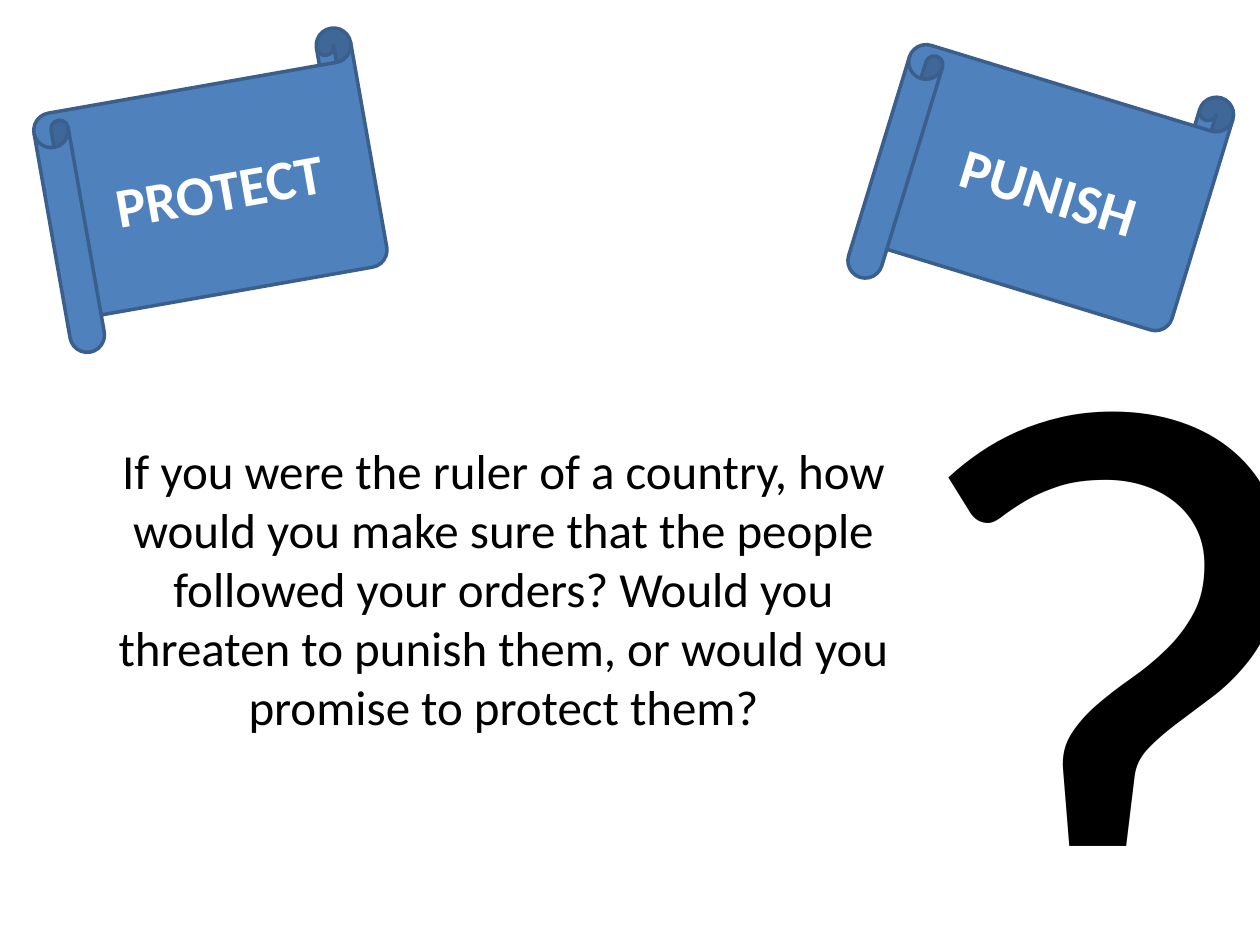
from pptx import Presentation
from pptx.dml.color import RGBColor
from pptx.enum.shapes import MSO_SHAPE
from pptx.enum.text import MSO_ANCHOR, MSO_AUTO_SIZE, PP_ALIGN
from pptx.util import Inches, Pt

BLACK = RGBColor(0x00, 0x00, 0x00)
WHITE = RGBColor(0xFF, 0xFF, 0xFF)
BLUE = RGBColor(0x4F, 0x81, 0xBD)
DARK_BLUE = RGBColor(0x3A, 0x5F, 0x8C)

QUESTION = (
    "If you were the ruler of a country, how would you make sure that the "
    "people followed your orders? Would you threaten to punish them, or "
    "would you promise to protect them?"
)


def write(sp, text, size, color, bold=False, align=None):
    """Fill a shape with one formatted paragraph and return it."""
    tf = sp.text_frame
    tf.word_wrap = True
    p = tf.paragraphs[0]
    p.alignment = align
    r = p.add_run()
    r.text = text
    font = {"name": "Calibri", "size": Pt(size), "bold": bold}
    for name, value in font.items():
        setattr(r.font, name, value)
    r.font.color.rgb = color
    return p


prs = Presentation()
prs.slide_width, prs.slide_height = Inches(10), Inches(7.5)
s = prs.slides.add_slide(prs.slide_layouts[6])

# Large question mark, running past the right edge
mark = s.shapes.add_textbox(Inches(6.97), Inches(0.78), Inches(4.53), Inches(9.44))
write(mark, "?", 555, BLACK)

# Question to the class
box = s.shapes.add_textbox(Inches(0.2), Inches(3.45), Inches(7.09), Inches(2.46))
p = write(box, QUESTION, 28, BLACK, align=PP_ALIGN.CENTER)
p.level = 1
pPr = p._p.get_or_add_pPr()
pPr.set("marL", str(Inches(0.5)))
pPr.set("indent", "0")

for sp in (mark, box):
    sp.text_frame.auto_size = MSO_AUTO_SIZE.SHAPE_TO_FIT_TEXT

# The two tilted scrolls
for label, left, top, angle in (("PROTECT", 0.37, 0.41, 350), ("PUNISH", 6.96, 0.39, 17)):
    scroll = s.shapes.add_shape(
        MSO_SHAPE.HORIZONTAL_SCROLL, Inches(left), Inches(top), Inches(2.6), Inches(2.2)
    )
    scroll.rotation = angle
    scroll.shadow.inherit = False
    scroll.fill.solid()
    scroll.fill.fore_color.rgb = BLUE
    scroll.line.color.rgb = DARK_BLUE
    scroll.line.width = Pt(2)
    scroll.text_frame.vertical_anchor = MSO_ANCHOR.MIDDLE
    write(scroll, label, 32, WHITE, bold=True, align=PP_ALIGN.CENTER)

prs.save("out.pptx")
